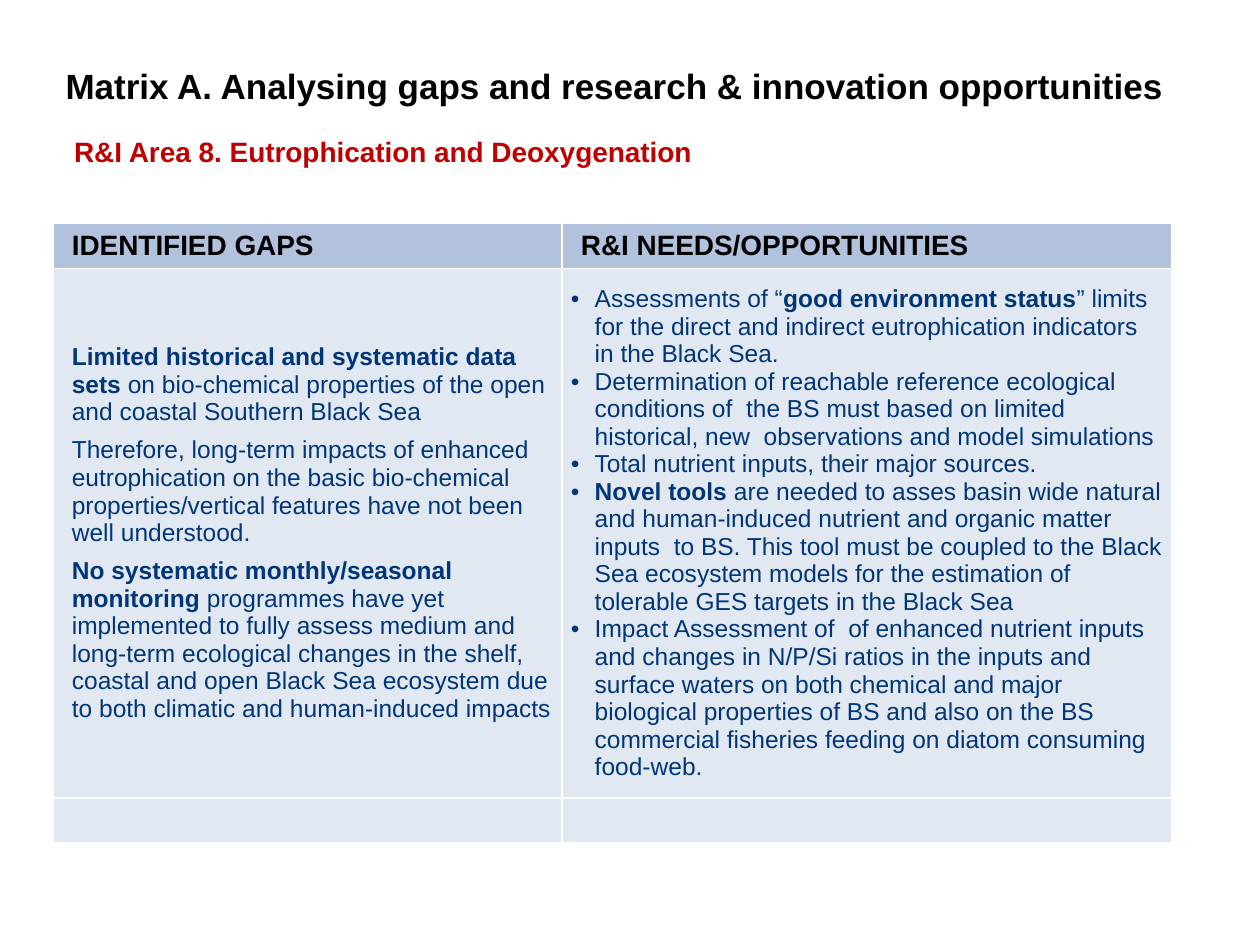
from lxml.etree import SubElement
from pptx import Presentation
from pptx.dml.color import RGBColor
from pptx.enum.text import MSO_ANCHOR, MSO_AUTO_SIZE, PP_ALIGN
from pptx.oxml.ns import qn
from pptx.util import Inches, Pt

BLACK, RED, NAVY, WHITE = "000000", "C00000", "003679", "FFFFFF"
HEADER_FILL, BODY_FILL = "B2C1DC", "E1E8F1"

HEADERS = ["IDENTIFIED GAPS", "R&I NEEDS/OPPORTUNITIES"]
GAPS = [
    "**Limited historical and systematic data sets **on bio-chemical properties "
    "of the open and coastal Southern Black Sea",
    "Therefore, long-term impacts of enhanced eutrophication on the basic "
    "bio-chemical properties/vertical features have not been well understood.",
    "**No systematic monthly/seasonal monitoring **programmes have yet implemented "
    "to fully assess medium and long-term ecological changes in the shelf, coastal "
    "and open Black Sea ecosystem due to both climatic and human-induced impacts",
]
NEEDS = [
    "Assessments of “**good environment status**” limits for the direct and "
    "indirect eutrophication indicators in the Black Sea.",
    "Determination of reachable reference ecological conditions of  the BS must "
    "based on limited historical, new  observations and model simulations",
    "Total nutrient inputs, their major sources.",
    "**Novel tools **are needed to asses basin wide natural and human-induced "
    "nutrient and organic matter inputs  to BS. This tool must be coupled to the "
    "Black Sea ecosystem models for the estimation of tolerable GES targets in "
    "the Black Sea",
    "Impact Assessment of  of enhanced nutrient inputs and changes in N/P/Si ratios "
    "in the inputs and surface waters on both chemical and major biological "
    "properties of BS and also on the BS commercial fisheries feeding on diatom "
    "consuming food-web.",
]


def color(value):
    return RGBColor.from_string(value)


def write(frame, paragraphs, size=14, fill=NAVY, bold=False, space=0, indent=0, bullet=False):
    """Fill a text frame; **double stars** toggle bold within a paragraph."""
    for index, text in enumerate(paragraphs):
        paragraph = frame.paragraphs[0] if index == 0 else frame.add_paragraph()
        paragraph.alignment = PP_ALIGN.LEFT
        paragraph.space_before = paragraph.space_after = Pt(space)
        properties = paragraph._p.get_or_add_pPr()
        properties.set("marL", str(Inches(indent)))
        properties.set("indent", str(-Inches(indent) if bullet else 0))
        if bullet:
            SubElement(properties, qn("a:buFont"), typeface="Arial")
            SubElement(properties, qn("a:buChar"), char="•")
        for part, words in enumerate(text.split("**")):
            if words:
                run = paragraph.add_run()
                run.text = words
                run.font.name, run.font.size = "Arial", Pt(size)
                run.font.bold = bold or part % 2 == 1
                run.font.color.rgb = color(fill)


class SlideBuilder:
    def __init__(self, presentation):
        self.width, self.height = presentation.slide_width, presentation.slide_height
        self.slide = presentation.slides.add_slide(presentation.slide_layouts[5])

    def box(self, left, top, width, height):
        """Turn shares of the slide into lengths."""
        return (int(left * self.width), int(top * self.height),
                int(width * self.width), int(height * self.height))

    def title(self, text, area):
        shape = self.slide.shapes.title
        shape.left, shape.top, shape.width, shape.height = self.box(*area)
        frame = shape.text_frame
        frame.auto_size, frame.vertical_anchor = MSO_AUTO_SIZE.NONE, MSO_ANCHOR.MIDDLE
        write(frame, [text], size=20, fill=BLACK, bold=True)

    def subtitle(self, text, area):
        frame = self.slide.shapes.add_textbox(*self.box(*area)).text_frame
        frame.word_wrap = True
        frame.auto_size = MSO_AUTO_SIZE.SHAPE_TO_FIT_TEXT
        write(frame, [text], size=16, fill=RED, bold=True)

    def table(self, area, columns, rows):
        """Add a table whose column and row sizes are shares of its area."""
        left, top, width, height = self.box(*area)
        table = self.slide.shapes.add_table(
            len(rows), len(columns), left, top, width, height).table
        for column, share in zip(table.columns, columns):
            column.width = int(width * share)
        for row, share in zip(table.rows, rows):
            row.height = int(height * share)
        for index, row in enumerate(table.rows):
            for cell in row.cells:
                self.style_cell(cell, BODY_FILL if index else HEADER_FILL)
        return table

    def style_cell(self, cell, fill):
        cell.margin_left = cell.margin_right = cell.margin_top = cell.margin_bottom = 0
        cell.vertical_anchor = MSO_ANCHOR.MIDDLE
        properties = cell._tc.get_or_add_tcPr()
        for side in ("lnL", "lnR", "lnT", "lnB"):
            line = SubElement(properties, qn(f"a:{side}"), w=str(Pt(1)))
            solid = SubElement(line, qn("a:solidFill"))
            SubElement(solid, qn("a:srgbClr"), val=WHITE)
        cell.fill.solid()
        cell.fill.fore_color.rgb = color(fill)


def main():
    presentation = Presentation()
    presentation.slide_width, presentation.slide_height = Inches(10), Inches(7.5)
    builder = SlideBuilder(presentation)
    builder.title("Matrix A. Analysing gaps and research & innovation opportunities",
                  (0.042, 0.05, 0.895, 0.08))
    builder.subtitle("R&I Area 8. Eutrophication and Deoxygenation",
                     (0.049, 0.136, 0.54, 0.05))
    table = builder.table((0.042, 0.236, 0.888, 0.656),
                          columns=(0.455, 0.545), rows=(0.073, 0.854, 0.073))
    for column, header in enumerate(HEADERS):
        write(table.cell(0, column).text_frame, [header],
              size=16, fill=BLACK, bold=True, space=3, indent=0.15)
    write(table.cell(1, 0).text_frame, GAPS, space=3, indent=0.15)
    needs = table.cell(1, 1)
    needs.margin_left = needs.margin_right = Inches(0.07)
    write(needs.text_frame, NEEDS, indent=0.19, bullet=True)
    presentation.save("out.pptx")


if __name__ == "__main__":
    main()
